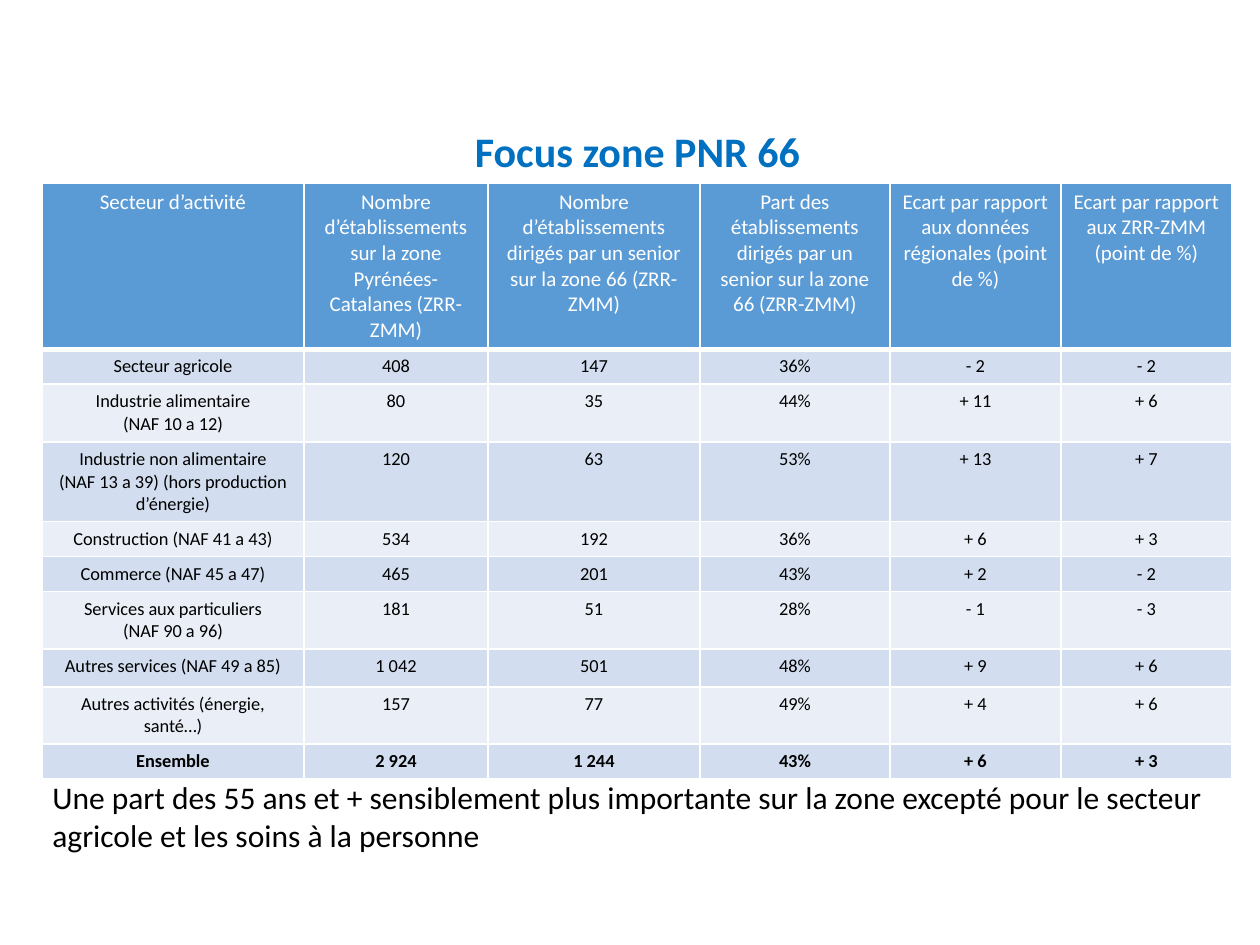
from lxml import etree
from pptx import Presentation, util as u
from pptx.dml.color import RGBColor
from pptx.enum import text
from pptx.oxml.ns import qn

PX = u.Inches(1) / 126

COLORS = {
    "title": "0070C0",
    "header": "5B9BD5",
    "odd_row": "D2DEEF",
    "even_row": "EAEFF7",
    "white": "FFFFFF",
    "black": "000000",
}
CENTER = text.PP_ALIGN.CENTER
COLUMN_WIDTHS = [262, 184, 212, 190, 171, 171]
ROW_HEIGHTS = [166, 35, 58, 79, 35, 35, 57, 38, 57, 35]
HEADERS = [
    "Secteur d’activité",
    "Nombre d’établissements sur la zone Pyrénées-Catalanes (ZRR-ZMM)",
    "Nombre d’établissements dirigés par un senior sur la zone 66 (ZRR-ZMM)",
    "Part des établissements dirigés par un senior sur la zone 66 (ZRR-ZMM)",
    "Ecart par rapport aux données régionales (point de %)",
    "Ecart par rapport aux ZRR-ZMM (point de %)",
]
SECTORS = [
    ["Secteur agricole", "408", "147", "36%", "- 2", "- 2"],
    ["Industrie alimentaire\n(NAF 10 a 12)", "80", "35", "44%", "+ 11", "+ 6"],
    ["Industrie non alimentaire\n(NAF 13 a 39) (hors production d’énergie)",
     "120", "63", "53%", "+ 13", "+ 7"],
    ["Construction (NAF 41 a 43)", "534", "192", "36%", "+ 6", "+ 3"],
    ["Commerce (NAF 45 a 47)", "465", "201", "43%", "+ 2", "- 2"],
    ["Services aux particuliers\n(NAF 90 a 96)", "181", "51", "28%", "- 1", "- 3"],
    ["Autres services (NAF 49 a 85)", "1 042", "501", "48%", "+ 9", "+ 6"],
    ["Autres activités (énergie, santé…)", "157", "77", "49%", "+ 4", "+ 6"],
    ["Ensemble", "2 924", "1 244", "43%", "+ 6", "+ 3"],
]


def px(length):
    return u.Emu(round(length * PX))


def rgb(name):
    return RGBColor.from_string(COLORS[name])


def write(frame, content, size, color="black", bold=False, align=None, spacing=None):
    """Fill a text frame, one paragraph for each line of content."""
    frame.text = content
    for paragraph in frame.paragraphs:
        paragraph.alignment = align
        paragraph.line_spacing = spacing
        for run in paragraph.runs:
            run.font.name = "Calibri"
            run.font.size = u.Pt(size)
            run.font.bold = bold
            run.font.color.rgb = rgb(color)


def set_borders(cell, top=1, bottom=1):
    """Draw white cell borders, with widths in points."""
    properties = cell._tc.get_or_add_tcPr()
    sides = {"a:lnL": 1, "a:lnR": 1, "a:lnT": top, "a:lnB": bottom}
    for position, (side, width) in enumerate(sides.items()):
        line = etree.Element(qn(side), w=str(u.Pt(width)))
        fill = etree.SubElement(line, qn("a:solidFill"))
        etree.SubElement(fill, qn("a:srgbClr"), val=COLORS["white"])
        properties.insert(position, line)


def add_title(slide):
    title = slide.shapes.title
    title.left, title.top, title.width, title.height = map(px, (42, 118, 1191, 71))
    frame = title.text_frame
    frame.auto_size = text.MSO_AUTO_SIZE.NONE
    frame.vertical_anchor = text.MSO_ANCHOR.MIDDLE
    write(frame, "Focus zone PNR 66", 24, color="title", bold=True,
          align=CENTER, spacing=0.9)


def add_sector_table(slide):
    rows = [HEADERS, *SECTORS]
    table = slide.shapes.add_table(
        len(rows), len(HEADERS), px(42), px(183),
        px(sum(COLUMN_WIDTHS)), px(sum(ROW_HEIGHTS))).table
    for column, width in zip(table.columns, COLUMN_WIDTHS):
        column.width = px(width)
    for row, height in zip(table.rows, ROW_HEIGHTS):
        row.height = px(height)

    for r, values in enumerate(rows):
        is_header = r == 0
        band = "header" if is_header else "odd_row" if r % 2 else "even_row"
        for c, value in enumerate(values):
            cell = table.cell(r, c)
            cell.fill.solid()
            cell.fill.fore_color.rgb = rgb(band)
            set_borders(cell, top=3 if r == 1 else 1, bottom=3 if is_header else 1)
            write(cell.text_frame, value, 12 if is_header else 10.5,
                  color="white" if is_header else "black",
                  bold=values is SECTORS[-1], align=CENTER)


def add_conclusion(slide):
    box = slide.shapes.add_textbox(px(40), px(772), px(1192), px(89))
    frame = box.text_frame
    frame.word_wrap = True
    frame.auto_size = text.MSO_AUTO_SIZE.SHAPE_TO_FIT_TEXT
    write(frame, "Une part des 55 ans et + sensiblement plus importante sur la zone "
                 "excepté pour le secteur agricole et les soins à la personne", 18)


def main():
    deck = Presentation()
    deck.slide_width, deck.slide_height = px(1260), px(945)
    slide = deck.slides.add_slide(deck.slide_layouts.get_by_name("Title Only"))
    add_title(slide)
    add_sector_table(slide)
    add_conclusion(slide)
    deck.save("out.pptx")


if __name__ == "__main__":
    main()
